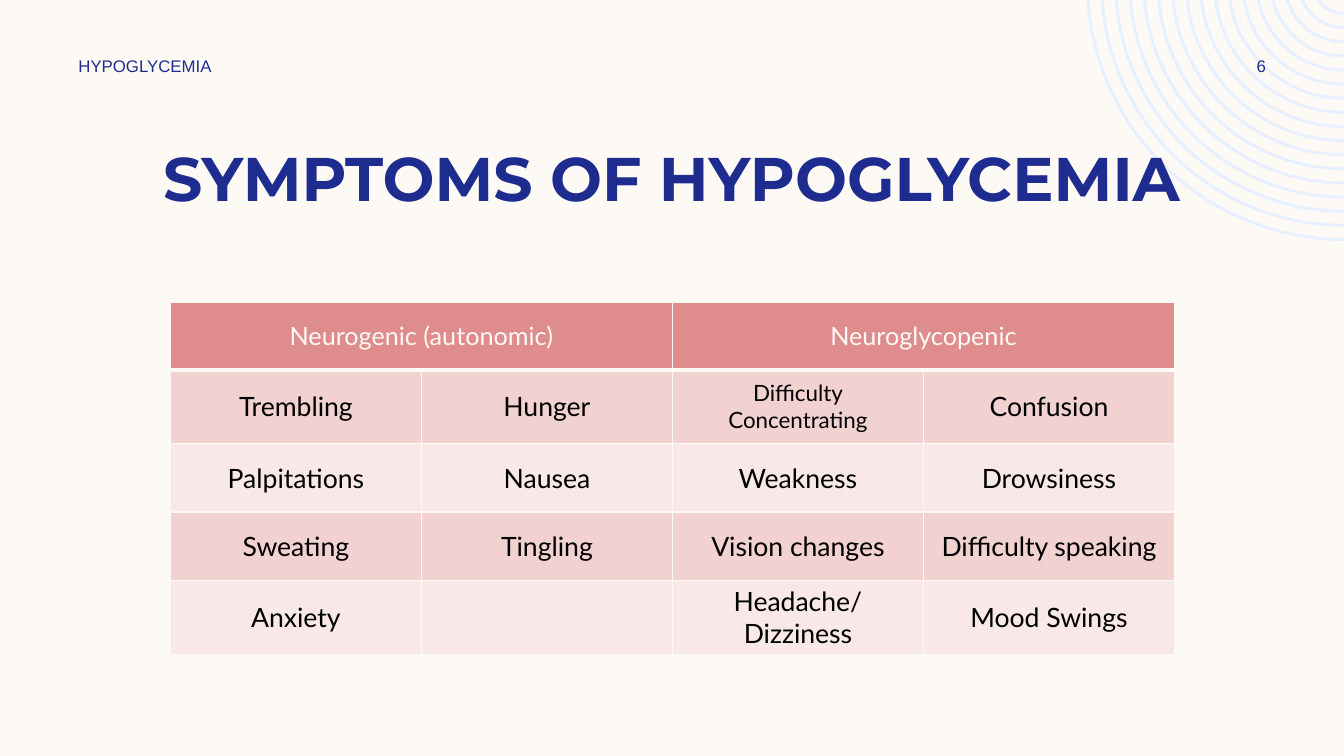
from math import asin, cos, degrees, sin

from lxml.etree import SubElement
from pptx import Presentation
from pptx.dml.color import RGBColor
from pptx.enum.text import MSO_ANCHOR, PP_ALIGN
from pptx.oxml.ns import qn
from pptx.util import Inches, Pt

COLORS = {
    "cream": "FDFAF6",
    "navy": "1F2C8F",
    "ring": "E6F0FE",
    "header": "DE8C8C",
    "dark_band": "F2D1D1",
    "light_band": "F8E8E8",
    "black": "000000",
}
SLIDE_WIDTH, SLIDE_HEIGHT = 13.33, 7.5
HEADINGS = ["Neurogenic (autonomic)", "Neuroglycopenic"]
SYMPTOMS = [
    ["Trembling", "Hunger", "Difficulty\nConcentrating", "Confusion"],
    ["Palpitations", "Nausea", "Weakness", "Drowsiness"],
    ["Sweating", "Tingling", "Vision changes", "Difficulty speaking"],
    ["Anxiety", "", "Headache/Dizziness", "Mood Swings"],
]
ROW_HEIGHTS = [0.67, 0.73, 0.68, 0.68, 0.68]
COLUMN_WIDTH = 2.49


def rgb(name):
    return RGBColor.from_string(COLORS[name])


def write_text(frame, text, size, font, color, align, bold=False):
    frame.text = text
    for para in frame.paragraphs:
        para.alignment = align
        para.font.size = Pt(size)
        para.font.name = font
        para.font.bold = bold
        para.font.color.rgb = rgb(color)


def add_text(page, bounds, text, size, font, align, bold=False):
    box = page.shapes.add_textbox(*[Inches(length) for length in bounds])
    frame = box.text_frame
    frame.word_wrap = True
    frame.vertical_anchor = MSO_ANCHOR.MIDDLE
    write_text(frame, text, size, font, "navy", align, bold)


def bend(segment, radius, start, sweep):
    segment.clear()
    segment.tag = qn("a:arcTo")
    for name in ("wR", "hR"):
        segment.set(name, str(Inches(radius)))
    segment.set("stAng", str(round(start * 60000)))
    segment.set("swAng", str(round(sweep * 60000)))


def add_rings(page, count=17, largest=2.56, step=0.14, thickness=0.03, center_y=-0.17):
    edges = [(largest - index * step, largest - index * step - thickness) for index in range(count)]

    def start_angle(radius):
        return asin(-center_y / radius)

    def top_point(radius):
        return Inches(SLIDE_WIDTH - radius * cos(start_angle(radius))), 0

    def bottom_point(radius):
        return Inches(SLIDE_WIDTH), Inches(center_y + radius * sin(1.5708))

    builder = page.shapes.build_freeform(*top_point(largest))
    for outer, inner in edges:
        builder.move_to(*top_point(outer))
        builder.add_line_segments([bottom_point(outer), bottom_point(inner), top_point(inner)])
    rings = builder.convert_to_shape()
    segments = list(rings._element.iter(qn("a:lnTo")))
    per_ring = len(segments) // count
    for index, (outer, inner) in enumerate(edges):
        outer_angle, inner_angle = degrees(start_angle(outer)), degrees(start_angle(inner))
        bend(segments[index * per_ring], outer, 180 - outer_angle, outer_angle - 90)
        bend(segments[index * per_ring + 2], inner, 90, 90 - inner_angle)
    rings.shadow.inherit = False
    rings.fill.solid()
    rings.fill.fore_color.rgb = rgb("ring")
    rings.line.fill.background()


def set_borders(cell, top, bottom):
    properties = cell._tc.get_or_add_tcPr()
    sides = (("lnL", 1), ("lnR", 1), ("lnT", top), ("lnB", bottom))
    for position, (side, width) in enumerate(sides):
        line = SubElement(properties, qn(f"a:{side}"), w=str(Pt(width)))
        fill = SubElement(line, qn("a:solidFill"))
        SubElement(fill, qn("a:srgbClr"), val=COLORS["cream"])
        properties.insert(position, line)


def style_cell(cell, fill, top, bottom):
    cell.fill.solid()
    cell.fill.fore_color.rgb = rgb(fill)
    cell.vertical_anchor = MSO_ANCHOR.MIDDLE
    cell.margin_left = cell.margin_right = Inches(0.11)
    set_borders(cell, top, bottom)


def add_symptom_table(page, left, top):
    columns = len(SYMPTOMS[0])
    frame = page.shapes.add_table(
        len(ROW_HEIGHTS), columns, Inches(left), Inches(top),
        Inches(COLUMN_WIDTH * columns), Inches(sum(ROW_HEIGHTS)),
    )
    table = frame.table
    for column in table.columns:
        column.width = Inches(COLUMN_WIDTH)
    for row, height in zip(table.rows, ROW_HEIGHTS):
        row.height = Inches(height)
    for column in range(columns):
        style_cell(table.cell(0, column), "header", 1, 3)
    for index, heading in enumerate(HEADINGS):
        cell = table.cell(0, 2 * index)
        cell.merge(table.cell(0, 2 * index + 1))
        write_text(cell.text_frame, heading, 18, "Lato", "cream", PP_ALIGN.CENTER)
    for row, symptoms in enumerate(SYMPTOMS, start=1):
        for column, symptom in enumerate(symptoms):
            cell = table.cell(row, column)
            style_cell(cell, "dark_band" if row % 2 else "light_band", 3 if row == 1 else 1, 1)
            size = 16 if "\n" in symptom else 19
            write_text(cell.text_frame, symptom, size, "Lato", "black", PP_ALIGN.CENTER)


def main():
    deck = Presentation()
    deck.slide_width = Inches(SLIDE_WIDTH)
    deck.slide_height = Inches(SLIDE_HEIGHT)
    page = deck.slides.add_slide(deck.slide_layouts[6])
    page.background.fill.solid()
    page.background.fill.fore_color.rgb = rgb("cream")
    add_rings(page)
    add_text(page, (0.83, 1.33, 11.67, 0.84), "SYMPTOMS OF HYPOGLYCEMIA", 44,
             "Montserrat", PP_ALIGN.CENTER, bold=True)
    add_symptom_table(page, 1.69, 3)
    add_text(page, (0.68, 0.5, 3.5, 0.3), "HYPOGLYCEMIA", 12, "Arial", PP_ALIGN.LEFT)
    add_text(page, (11.97, 0.5, 1.08, 0.3), "6", 12, "Arial", PP_ALIGN.CENTER)
    deck.save("out.pptx")


if __name__ == "__main__":
    main()
